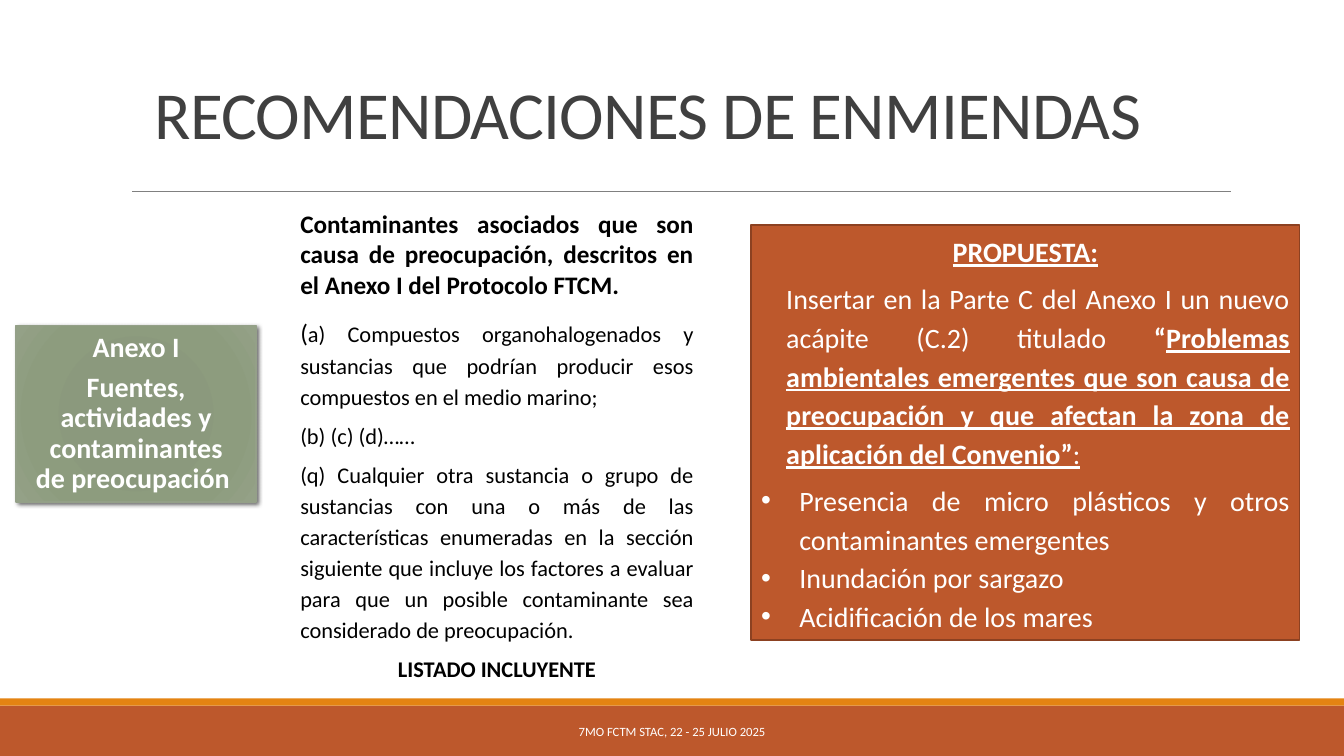
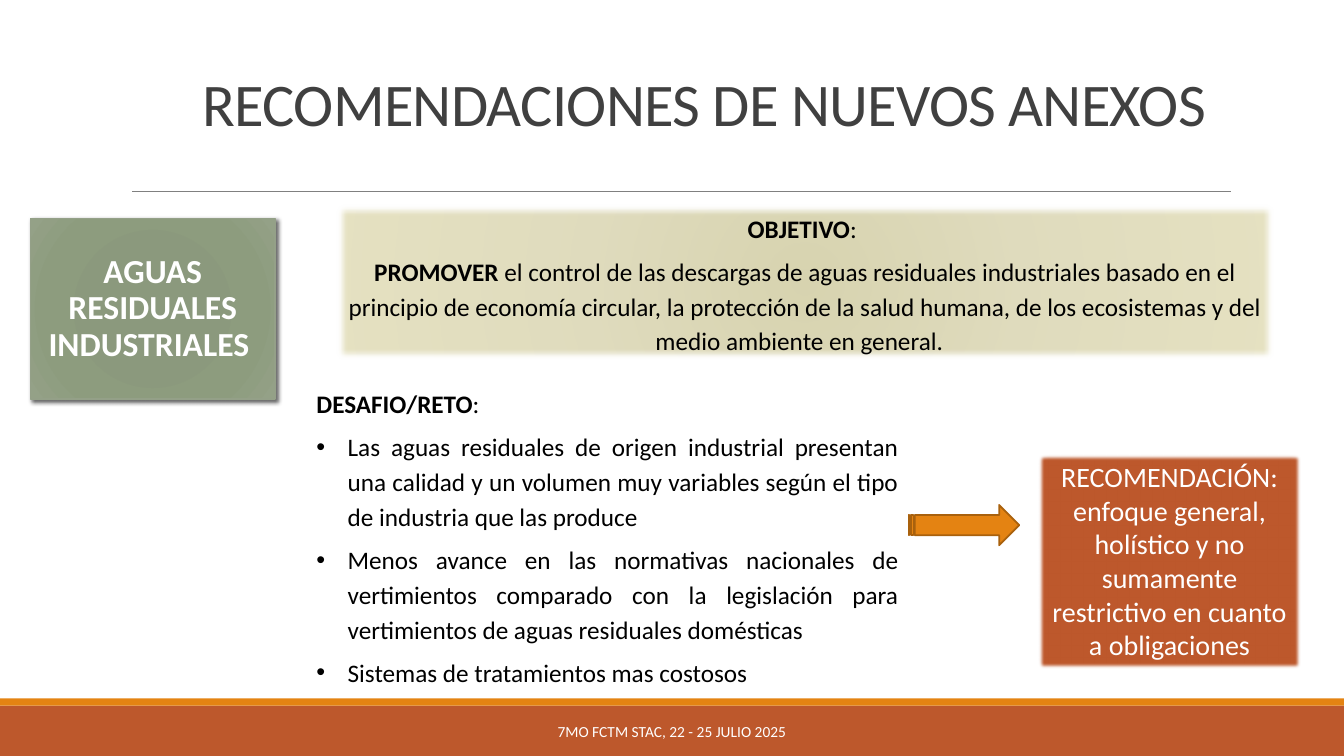
from dataclasses import dataclass
from typing import Optional

from lxml.etree import SubElement
from pptx import Presentation
from pptx.dml.color import RGBColor
from pptx.enum.shapes import MSO_CONNECTOR, MSO_SHAPE
from pptx.enum.text import MSO_ANCHOR, MSO_AUTO_SIZE, PP_ALIGN
from pptx.oxml.ns import qn
from pptx.util import Inches, Pt


@dataclass(frozen=True)
class Theme:
    """Colours, font and type sizes of the deck."""
    font: str = "Calibri"
    rust: str = "BD582C"
    rust_edge: str = "8C4121"
    orange: str = "E48312"
    orange_edge: str = "A9610D"
    sage_edge: str = "94A088"
    rule: str = "808080"
    title: str = "404040"
    black: str = "000000"
    white: str = "FFFFFF"
    sage: tuple = ((0, "8A987B"), (34, "8B997D"), (70, "8D9C7E"), (100, "94A187"))
    sand: tuple = ((0, "D7D3AF"), (45, "DFDBBD"), (100, "E5E1C1"))
    body: float = 18
    small: float = 16
    label: float = 20
    heading: float = 24


THEME = Theme()


@dataclass(frozen=True)
class Box:
    """Place and size in inches."""
    left: float
    top: float
    width: float
    height: float

    def lengths(self) -> tuple:
        """Return the four values as lengths."""
        return tuple(Inches(v) for v in (self.left, self.top, self.width, self.height))


@dataclass(frozen=True)
class Span:
    """A stretch of text in one format."""
    text: str
    bold: bool = False
    underline: bool = False
    size: Optional[float] = None


@dataclass(frozen=True)
class Para:
    """A paragraph with its spans and spacing."""
    spans: tuple
    align: PP_ALIGN = PP_ALIGN.JUSTIFY
    size: float = THEME.body
    line: float = 1.15
    after: float = 6
    indent: float = 0
    bullet: bool = False


def rgb(colour: str) -> RGBColor:
    """Turn a hex colour into an RGBColor."""
    return RGBColor.from_string(colour)


def write(shape, paras: list, colour: str, anchor=MSO_ANCHOR.TOP, tracking: int = 0, grow: bool = False) -> None:
    """Fill a shape with formatted paragraphs."""
    frame = shape.text_frame
    frame.word_wrap = True
    frame.vertical_anchor = anchor
    frame.auto_size = MSO_AUTO_SIZE.SHAPE_TO_FIT_TEXT if grow else MSO_AUTO_SIZE.NONE
    for index, item in enumerate(paras):
        para = frame.add_paragraph() if index else frame.paragraphs[0]
        para.alignment = item.align
        para.line_spacing = item.line
        para.space_before = Pt(0)
        para.space_after = Pt(item.after)
        properties = para._p.get_or_add_pPr()
        properties.set("marL", str(Inches(item.indent)))
        properties.set("indent", str(-Inches(item.indent) if item.bullet else 0))
        if item.bullet:
            SubElement(properties, qn("a:buFont")).set("typeface", "Arial")
            SubElement(properties, qn("a:buChar")).set("char", "•")
        for span in item.spans:
            run = para.add_run()
            run.text = span.text
            run.font.name = THEME.font
            run.font.size = Pt(span.size or item.size)
            run.font.bold = span.bold
            run.font.underline = span.underline
            run.font.color.rgb = rgb(colour)
            if tracking:
                run._r.get_or_add_rPr().set("spc", str(tracking))


def add_block(page, box: Box, fill: Optional[str] = None, edge: Optional[str] = None,
              width: float = 1.25, kind=MSO_SHAPE.RECTANGLE):
    """Draw a preset shape without shadow."""
    shape = page.shapes.add_shape(kind, *box.lengths())
    shape.shadow.inherit = False
    if fill:
        shape.fill.solid()
        shape.fill.fore_color.rgb = rgb(fill)
    if edge:
        shape.line.color.rgb = rgb(edge)
        shape.line.width = Pt(width)
    else:
        shape.line.fill.background()
    return shape


def add_text(page, box: Box, paras: list, colour: str, anchor=MSO_ANCHOR.TOP, grow: bool = True) -> None:
    """Draw a wrapping text box."""
    write(page.shapes.add_textbox(*box.lengths()), paras, colour, anchor, grow=grow)


def fill_radial(shape, stops: tuple) -> None:
    """Give a shape a circular gradient."""
    shape.fill.gradient()
    gradient = shape._element.spPr.find(qn("a:gradFill"))
    for child in list(gradient):
        gradient.remove(child)
    stop_list = SubElement(gradient, qn("a:gsLst"))
    for position, colour in stops:
        stop = SubElement(stop_list, qn("a:gs"), pos=str(position * 1000))
        SubElement(stop, qn("a:srgbClr"), val=colour)
    circle = SubElement(gradient, qn("a:path"), path="circle")
    SubElement(circle, qn("a:fillToRect"), {side: "100000" for side in "ltrb"})


def add_effect(shape, name: str, **values: int):
    """Add one effect to a shape and return its element."""
    effects = shape._element.spPr.find(qn("a:effectLst"))
    return SubElement(effects, qn(name), {key: str(value) for key, value in values.items()})


def add_topic(page, box: Box, lines: list, size: float) -> None:
    """Draw the green topic card with its shadow."""
    card = add_block(page, box, edge=THEME.sage_edge, width=1)
    fill_radial(card, THEME.sage)
    shadow = add_effect(card, "a:outerShdw", blurRad=Pt(3), dist=Pt(2), dir=45 * 60000,
                        algn="tl", rotWithShape=0)
    colour = SubElement(shadow, qn("a:srgbClr"), val=THEME.black)
    SubElement(colour, qn("a:alpha"), val="60000")
    frame = card.text_frame
    frame.margin_left = frame.margin_right = Inches(0.16)
    frame.margin_top = frame.margin_bottom = Inches(0.09)
    paras = [Para((Span(line, bold=True),), PP_ALIGN.CENTER, size, 0.9, size * 0.35) for line in lines]
    write(card, paras, THEME.white, MSO_ANCHOR.MIDDLE)


def add_page(deck, title: str, box: Box, size: float, align, line: float, footer_size: float):
    """Start a slide with bands, rule, title and footer."""
    page = deck.slides.add_slide(deck.slide_layouts[5])
    add_block(page, Box(0, 7, 13.33, 0.5), THEME.rust)
    add_block(page, Box(0, 6.93, 13.33, 0.07), THEME.orange)
    rule = page.shapes.add_connector(MSO_CONNECTOR.STRAIGHT, Inches(1.31), Inches(1.9),
                                     Inches(12.21), Inches(1.9))
    rule.line.color.rgb = rgb(THEME.rule)
    rule.line.width = Pt(0.5)
    SubElement(rule._element.spPr, qn("a:effectLst"))
    heading = page.shapes.title
    heading.left, heading.top, heading.width, heading.height = box.lengths()
    write(heading, [Para((Span(title),), align, size, line, 0)], THEME.title, MSO_ANCHOR.BOTTOM, -50)
    footer = Para((Span("7MO FCTM STAC, 22 - 25 JULIO 2025"),), PP_ALIGN.CENTER, footer_size, 1, 0)
    add_text(page, Box(4.03, 7.06, 5.27, 0.4), [footer], THEME.white, MSO_ANCHOR.MIDDLE, grow=False)
    return page


def build_amendments(deck) -> None:
    """Build the slide on amendments."""
    page = add_page(deck, "RECOMENDACIONES DE ENMIENDAS", Box(1.43, 0.71, 11.11, 0.86),
                    48, PP_ALIGN.LEFT, 0.85, 9)
    add_topic(page, Box(0.16, 3.23, 2.38, 1.75),
              ["Anexo I", "Fuentes, actividades y contaminantes de preocupación "], THEME.label)
    proposal = add_block(page, Box(7.45, 2.23, 5.44, 4.12), THEME.rust, THEME.rust_edge)
    points = ["Presencia de micro plásticos y otros contaminantes emergentes",
              "Inundación por sargazo ", "Acidificación de los mares"]
    write(proposal, [
        Para((Span("PROPUESTA:", True, True),), PP_ALIGN.CENTER, THEME.label),
        Para((Span("Insertar en la Parte C del Anexo I un nuevo acápite (C.2) titulado "),
              Span("“", True),
              Span("Problemas ambientales emergentes que son causa de preocupación y que afectan "
                   "la zona de aplicación del Convenio”", True, True),
              Span(":", underline=True), Span(" ")), size=THEME.label, indent=0.25),
        *(Para((Span(point),), size=THEME.label, after=6 if point == points[-1] else 0,
               indent=0.38, bullet=True) for point in points),
    ], THEME.white, grow=True)
    add_text(page, Box(2.88, 2.02, 4.1, 4.83), [
        Para((Span("Contaminantes asociados que son causa de preocupación, descritos en el Anexo I "
                   "del Protocolo FTCM.", True),), line=1, after=10),
        Para((Span("(", size=THEME.body),
              Span("a) Compuestos organohalogenados y sustancias que podrían producir esos compuestos "
                   "en el medio marino; ")), size=THEME.small),
        Para((Span("(b) (c) (d)……"),), size=THEME.small),
        Para((Span("(q) Cualquier otra sustancia o grupo de sustancias con una o más de las "
                   "características enumeradas en la sección siguiente que incluye los factores a "
                   "evaluar para que un posible contaminante sea considerado de preocupación."),),
             size=THEME.small),
        Para((Span("LISTADO INCLUYENTE", True),), PP_ALIGN.CENTER, THEME.small),
    ], THEME.black)


def build_annexes(deck) -> None:
    """Build the slide on new annexes."""
    page = add_page(deck, "RECOMENDACIONES DE NUEVOS ANEXOS", Box(1.19, 0.53, 11.59, 0.9),
                    43.2, PP_ALIGN.CENTER, 1, 11)
    add_topic(page, Box(0.3, 2.17, 2.43, 1.79), ["AGUAS RESIDUALES INDUSTRIALES "], THEME.heading)
    goal = add_block(page, Box(3.33, 2.02, 9.31, 1.56))
    fill_radial(goal, THEME.sand)
    add_effect(goal, "a:softEdge", rad=Pt(5))
    write(goal, [
        Para((Span("OBJETIVO", True), Span(": ")), PP_ALIGN.CENTER),
        Para((Span("PROMOVER", True),
              Span(" el control de las descargas de aguas residuales industriales basado en el "
                   "principio de economía circular, la protección de la salud humana, de los "
                   "ecosistemas y del medio ambiente en general.  ")), PP_ALIGN.CENTER),
    ], THEME.black, grow=True)
    challenges = [
        "Las aguas residuales de origen industrial presentan una calidad y un volumen muy variables "
        "según el tipo de industria que las produce ",
        "Menos avance en las normativas nacionales de vertimientos comparado con la legislación para "
        "vertimientos de aguas residuales domésticas",
        "Sistemas de tratamientos mas costosos",
    ]
    add_text(page, Box(3.04, 3.76, 5.97, 3.12), [
        Para((Span("DESAFIO/RETO", True), Span(": "))),
        *(Para((Span(text),), indent=0.31, bullet=True) for text in challenges),
    ], THEME.black)
    advice = add_block(page, Box(10.3, 4.51, 2.6, 2.12), THEME.rust, THEME.rust_edge)
    add_effect(advice, "a:softEdge", rad=Pt(2.5))
    lines = ["RECOMENDACIÓN:",
             "enfoque general, holístico y no sumamente restrictivo en cuanto a obligaciones"]
    write(advice, [Para((Span(text),), PP_ALIGN.CENTER, THEME.label, 1, 0) for text in lines],
          THEME.white, grow=True)
    add_block(page, Box(9.01, 5.01, 1.1, 0.4), THEME.orange, THEME.orange_edge,
              kind=MSO_SHAPE.STRIPED_RIGHT_ARROW)


def main() -> None:
    """Build and save the deck."""
    deck = Presentation()
    deck.slide_width, deck.slide_height = Inches(13.33), Inches(7.5)
    build_amendments(deck)
    build_annexes(deck)
    deck.save("out.pptx")


if __name__ == "__main__":
    main()
